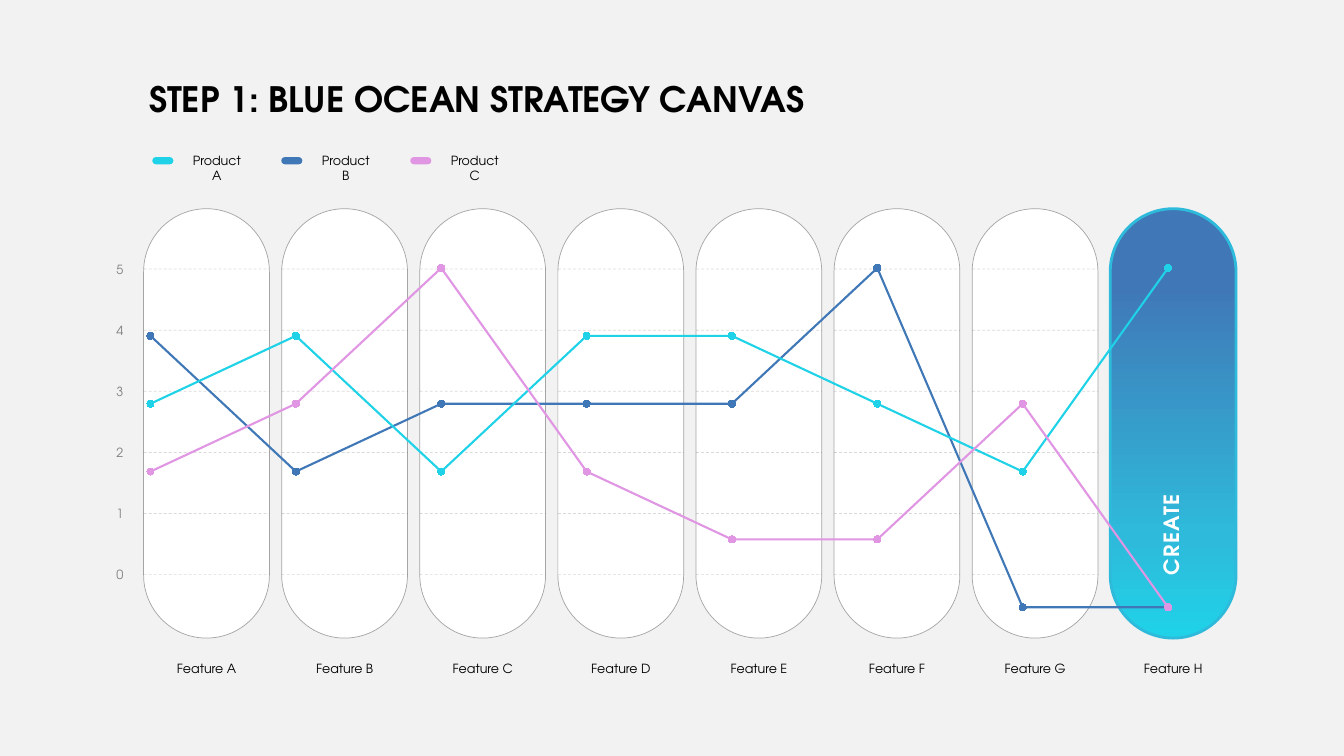
from lxml.etree import SubElement
from pptx import Presentation
from pptx.chart.data import CategoryChartData
from pptx.dml.color import RGBColor
from pptx.enum.chart import XL_CHART_TYPE as ChartType, XL_MARKER_STYLE as Marker
from pptx.enum.dml import MSO_LINE_DASH_STYLE as Dash
from pptx.enum.shapes import MSO_CONNECTOR as Connector, MSO_SHAPE as Preset
from pptx.enum.text import MSO_ANCHOR as Anchor, MSO_AUTO_SIZE as AutoSize, PP_ALIGN as Align
from pptx.oxml import parse_xml
from pptx.oxml.ns import nsdecls, qn
from pptx.util import Cm, Pt

BLACK = RGBColor(0x00, 0x00, 0x00)
WHITE = RGBColor(0xFF, 0xFF, 0xFF)
PAPER = RGBColor(0xF2, 0xF2, 0xF2)
GRAY = RGBColor(0x80, 0x80, 0x80)
SILVER = RGBColor(0xA5, 0xA5, 0xA5)
CYAN = RGBColor(0x1F, 0xD2, 0xE7)
TEAL = RGBColor(0x2E, 0xBB, 0xDB)
BLUE = RGBColor(0x40, 0x78, 0xB7)
PINK = RGBColor(0xE0, 0x96, 0xE3)
FONT = "TeX Gyre Adventor"

TITLE = "STEP 1: BLUE OCEAN STRATEGY CANVAS"
PRODUCTS = [("Product A", CYAN), ("Product B", BLUE), ("Product C", PINK)]
FEATURES = [f"Feature {letter}" for letter in "ABCDEFGH"]
SCORES = range(6)
HIGHLIGHT = "CREATE"
GRADIENT = [(0, CYAN), (23, TEAL), (82, BLUE)]
SERIES = [
    ("Series 1", BLUE, (80, 40, 60, 60, 60, 100, 0, None)),
    ("Series 2", CYAN, (60, 80, 40, 80, 80, 60, 40, 100)),
    ("Series 3", PINK, (40, 60, 100, 40, 20, 20, 60, None)),
]

# Lengths in centimetres
PILL_LEFT, PILL_TOP, PILL_WIDTH, PILL_HEIGHT, PILL_PITCH = 3.62, 5.26, 3.17, 10.82, 3.48
ZERO_Y, SCORE_STEP = 14.48, 1.54
LEGEND_LEFT, LEGEND_PITCH = 3.84, 3.25
LABEL_WIDTH, LABEL_HEIGHT = 2.3, 0.71


def add_text(page, text, left, top, width, height, size=9, color=BLACK,
             bold=False, align=Align.CENTER, wrap=False):
    box = page.shapes.add_textbox(Cm(left), Cm(top), Cm(width), Cm(height))
    frame = box.text_frame
    frame.text = text
    frame.word_wrap = wrap
    frame.auto_size = AutoSize.SHAPE_TO_FIT_TEXT
    para = frame.paragraphs[0]
    para.alignment = align
    font = para.runs[0].font
    font.name, font.size, font.bold = FONT, Pt(size), bold
    font.color.rgb = color
    return box


def add_pill(page, left, top, width, height, fill, line=None, weight=0.5):
    pill = page.shapes.add_shape(Preset.ROUNDED_RECTANGLE,
                                 Cm(left), Cm(top), Cm(width), Cm(height))
    pill.adjustments[0] = 0.5
    pill.shadow.inherit = False
    pill.fill.solid()
    pill.fill.fore_color.rgb = fill
    if line is None:
        pill.line.fill.background()
    else:
        pill.line.color.rgb = line
        pill.line.width = Pt(weight)
    return pill


def add_grid_line(page, left, y):
    rule = page.shapes.add_connector(Connector.STRAIGHT, Cm(left), Cm(y),
                                     Cm(left + PILL_WIDTH), Cm(y))
    rule.line.color.rgb = BLACK
    rule.line.width = Pt(0.5)
    rule.line.dash_style = Dash.DASH
    properties = rule.element.spPr
    for color in properties.iter(qn("a:srgbClr")):
        SubElement(color, qn("a:alpha"), val="15000")
    SubElement(properties, qn("a:effectLst"))


def set_gradient(shape, stops):
    """Replace the solid fill with a gradient that runs from bottom to top."""
    stop_xml = "".join(f'<a:gs pos="{place * 1000}"><a:srgbClr val="{color}"/></a:gs>'
                       for place, color in stops)
    properties = shape.element.spPr
    solid = properties.find(qn("a:solidFill"))
    properties.replace(solid, parse_xml(
        f'<a:gradFill {nsdecls("a")} rotWithShape="1"><a:gsLst>{stop_xml}</a:gsLst>'
        '<a:lin ang="16200000" scaled="0"/></a:gradFill>'))


def add_score_chart(page):
    data = CategoryChartData()
    data.categories = [str(number + 1) for number in range(len(FEATURES))]
    for name, _, values in SERIES:
        data.add_series(name, values)
    chart = page.shapes.add_chart(ChartType.LINE_MARKERS, Cm(1.35), Cm(4.83),
                                  Cm(30.53), Cm(10.69), data).chart
    chart.has_legend = chart.has_title = False
    chart.font.name, chart.font.size = "Calibri", Pt(10)
    chart.font.color.rgb = BLACK
    for axis in (chart.category_axis, chart.value_axis):
        axis.visible = axis.has_major_gridlines = False
    chart.value_axis.minimum_scale, chart.value_axis.maximum_scale = 0, 120
    plot = chart.plots[0]
    plot.vary_by_categories = False
    for series, (_, color, _) in zip(plot.series, SERIES):
        series.smooth = False
        series.format.line.color.rgb = color
        series.format.line.width = Pt(1.5)
        marker = series.marker
        marker.style, marker.size = Marker.CIRCLE, 5
        marker.format.fill.solid()
        marker.format.fill.fore_color.rgb = color
        marker.format.line.color.rgb = color

    # Missing scores drop to zero, and the plot fills the frame evenly
    chart.element.find(".//" + qn("c:dispBlanksAs")).set("val", "zero")
    area = chart.element.find(".//" + qn("c:plotArea"))
    for old in area.findall(qn("c:layout")):
        area.remove(old)
    places = [("layoutTarget", "inner"), ("xMode", "edge"), ("yMode", "edge"),
              ("x", 0.02), ("y", 0.02), ("w", 0.96), ("h", 0.96)]
    layout_xml = "".join(f'<c:{tag} val="{value}"/>' for tag, value in places)
    area.insert(0, parse_xml(f'<c:layout {nsdecls("c")}><c:manualLayout>{layout_xml}'
                             '</c:manualLayout></c:layout>'))


def main():
    deck = Presentation()
    deck.slide_width, deck.slide_height = Cm(33.87), Cm(19.05)
    page = deck.slides.add_slide(deck.slide_layouts[6])
    page.background.fill.solid()
    page.background.fill.fore_color.rgb = PAPER

    add_text(page, TITLE, 3.51, 1.83, 17.86, 1.32, size=25, bold=True, align=Align.LEFT)
    for index, (product, color) in enumerate(PRODUCTS):
        left = LEGEND_LEFT + index * LEGEND_PITCH
        add_pill(page, left, 3.96, 0.53, 0.18, color)
        add_text(page, product, left + 0.71, 3.73, 1.83, 0.64, wrap=True)

    last = len(FEATURES) - 1
    for index, feature in enumerate(FEATURES):
        left = PILL_LEFT + index * PILL_PITCH
        frame = (left, PILL_TOP, PILL_WIDTH, PILL_HEIGHT)
        if index == last:
            set_gradient(add_pill(page, *frame, BLUE, TEAL, 2), GRADIENT)
        else:
            add_pill(page, *frame, WHITE, SILVER)
            for score in SCORES:
                add_grid_line(page, left, ZERO_Y - score * SCORE_STEP)
        add_text(page, feature, left + (PILL_WIDTH - LABEL_WIDTH) / 2, 16.54,
                 LABEL_WIDTH, LABEL_HEIGHT)

    for score in SCORES:
        top = ZERO_Y - score * SCORE_STEP - LABEL_HEIGHT / 2
        box = add_text(page, str(score), 2.57, top, 0.79, LABEL_HEIGHT,
                       color=GRAY, align=Align.RIGHT)
        box.text_frame.vertical_anchor = Anchor.MIDDLE

    create = add_text(page, HIGHLIGHT, 28.12, 12.78, 2.9, 1.02, size=15,
                      color=WHITE, bold=True, align=Align.LEFT)
    create.rotation = 270
    span = create.text_frame.paragraphs[0].runs[0]
    span.font.element.set("spc", "100") if hasattr(span.font, "element") else \
        create.element.find(".//" + qn("a:rPr")).set("spc", "100")

    add_score_chart(page)
    deck.save("out.pptx")


if __name__ == "__main__":
    main()
